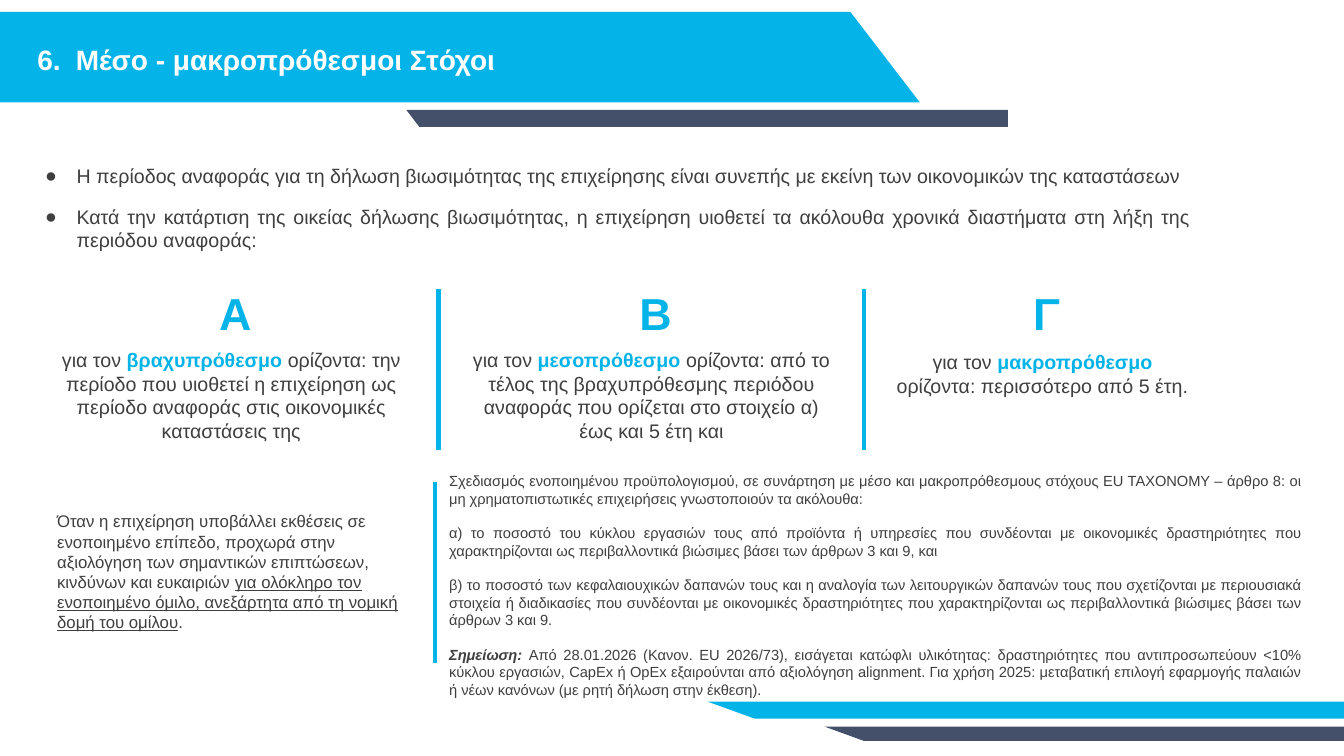
from lxml import etree
from pptx import Presentation
from pptx.dml.color import RGBColor
from pptx.enum.shapes import MSO_CONNECTOR
from pptx.enum.text import MSO_ANCHOR, PP_ALIGN
from pptx.oxml.ns import qn
from pptx.util import Cm, Pt

LEFT, MID, JUST = PP_ALIGN.LEFT, PP_ALIGN.CENTER, PP_ALIGN.JUSTIFY
TOP, CENTER = MSO_ANCHOR.TOP, MSO_ANCHOR.MIDDLE
STRAIGHT = MSO_CONNECTOR.STRAIGHT
WIDTH, HEIGHT = 33.87, 19.05
BLUE, NAVY, GREY, WHITE = "04B3E7", "444F69", "3F3F3F", "FFFFFF"


def paint(target, color):
    target.solid()
    target.fore_color.rgb = RGBColor.from_string(color)


def mark(para, bullet, color):
    props = para._p.get_or_add_pPr()
    tint = etree.SubElement(props, qn("a:buClr"))
    etree.SubElement(tint, qn("a:srgbClr"), val=color)
    if isinstance(bullet, int):
        etree.SubElement(props, qn("a:buFont"), typeface="+mj-lt")
        etree.SubElement(props, qn("a:buAutoNum"), type="arabicPeriod",
                         startAt=str(bullet))
    else:
        etree.SubElement(props, qn("a:buFont"), typeface="Arial")
        etree.SubElement(props, qn("a:buChar"), char=bullet)


def write(slide, box, paras, size=14, color=GREY, bold=False, align=LEFT,
          anchor=TOP, pad=(0.25, 0.13), margin=0, hang=0, bullet=None, gap=6):
    frame = slide.shapes.add_textbox(*map(Cm, box)).text_frame
    frame.word_wrap = True
    frame.vertical_anchor = anchor
    frame.margin_left = frame.margin_right = Cm(pad[0])
    frame.margin_top = frame.margin_bottom = Cm(pad[1])
    for index, runs in enumerate(paras):
        para = frame.add_paragraph() if index else frame.paragraphs[0]
        para.alignment = align
        para.space_before = Pt(gap if index else 0)
        para.space_after = Pt(gap)
        props = para._p.get_or_add_pPr()
        props.set("marL", str(Cm(margin)))
        props.set("indent", str(Cm(-hang)))
        if bullet:
            mark(para, bullet, color)
        for text, style in runs:
            run = para.add_run()
            run.text = text
            font = run.font
            font.name, font.size = "Arial", Pt(size)
            font.bold = style.get("bold", bold)
            font.italic = style.get("italic", False)
            font.underline = style.get("under", False)
            paint(font.fill, style.get("color", color))


def band(slide, box, color, left_cut=0, right_cut=0):
    left, top, width, height = box
    right, low = left + width, top + height
    form = slide.shapes.build_freeform(Cm(left), Cm(top))
    points = [(right - right_cut, top), (right, low), (left + left_cut, low)]
    form.add_line_segments([(Cm(x), Cm(y)) for x, y in points])
    shape = form.convert_to_shape()
    shape.shadow.inherit = False
    paint(shape.fill, color)
    shape.line.fill.background()


def rule(slide, x, top, height):
    line = slide.shapes.add_connector(STRAIGHT, Cm(x), Cm(top), Cm(x), Cm(top + height))
    paint(line.line.fill, BLUE)
    line.line.width = Pt(3)
    etree.SubElement(line._element.spPr, qn("a:effectLst"))


def header(slide, box):
    left, top, width, height = box
    band(slide, box, BLUE, right_cut=1.75)
    band(slide, (left + 10.24, top + 2.47, 15.16, 0.43), NAVY, left_cut=0.33)
    write(slide, (left + 0.69, top + 0.28, 20.8, 1.83),
          [[("Μέσο - μακροπρόθεσμοι Στόχοι", {})]], size=20, color=WHITE,
          bold=True, anchor=CENTER, margin=0.97, hang=0.97, bullet=6, gap=0)


def footer(slide, top):
    band(slide, (17.83, top, WIDTH - 17.83, 0.43), BLUE, left_cut=1.19)
    band(slide, (20.78, top + 0.63, WIDTH - 20.78, 0.36), NAVY, left_cut=0.99)


def intro(slide, box):
    lines = [
        "Η περίοδος αναφοράς για τη δήλωση βιωσιμότητας της επιχείρησης είναι συνεπής με εκείνη των οικονομικών της καταστάσεων",
        "Κατά την κατάρτιση της οικείας δήλωσης βιωσιμότητας, η επιχείρηση υιοθετεί τα ακόλουθα χρονικά διαστήματα στη λήξη της περιόδου αναφοράς:",
    ]
    write(slide, box, [[(line, {})] for line in lines], align=JUST,
          pad=(0.25, 0.25), margin=0.99, hang=0.79, bullet="●")


def column(slide, box, letter, term, rest, drop):
    left, top, width, height = box
    write(slide, (left + width / 2 - 0.71, top, 1.42, 2.31), [[(letter, {})]],
          size=32, color=BLUE, bold=True, align=MID, pad=(0.25, 0.38), margin=0.2)
    runs = [("για τον ", {}), (term, {"color": BLUE, "bold": True}), (rest, {})]
    write(slide, (left, top + drop, width, height - drop), [runs], align=MID)


def group(slide, box):
    runs = [
        ("Όταν η επιχείρηση υποβάλλει εκθέσεις σε ενοποιημένο επίπεδο, προχωρά στην αξιολόγηση των σημαντικών επιπτώσεων, κινδύνων και ευκαιριών ", {}),
        ("για ολόκληρο τον ενοποιημένο όμιλο, ανεξάρτητα από τη νομική δομή του ομίλου", {"under": True}),
        (".", {}),
    ]
    write(slide, box, [runs], size=12, margin=0.2)


def budget(slide, box):
    paras = [
        [("Σχεδιασμός ενοποιημένου προϋπολογισμού, σε συνάρτηση με μέσο και μακροπρόθεσμους στόχους EU TAXONOMY – άρθρο 8: οι μη χρηματοπιστωτικές επιχειρήσεις γνωστοποιούν τα ακόλουθα:", {})],
        [("α) το ποσοστό του κύκλου εργασιών τους από προϊόντα ή υπηρεσίες που συνδέονται με οικονομικές δραστηριότητες που χαρακτηρίζονται ως περιβαλλοντικά βιώσιμες βάσει των άρθρων 3 και 9, και", {})],
        [("β) το ποσοστό των κεφαλαιουχικών δαπανών τους και η αναλογία των λειτουργικών δαπανών τους που σχετίζονται με περιουσιακά στοιχεία ή διαδικασίες που συνδέονται με οικονομικές δραστηριότητες που χαρακτηρίζονται ως περιβαλλοντικά βιώσιμες βάσει των άρθρων 3 και 9.", {})],
        [("Σημείωση: ", {"bold": True, "italic": True}),
         ("Από 28.01.2026 (Κανον. EU 2026/73), εισάγεται κατώφλι υλικότητας: δραστηριότητες που αντιπροσωπεύουν <10% κύκλου εργασιών, CapEx ή OpEx εξαιρούνται από αξιολόγηση alignment. Για χρήση 2025: μεταβατική επιλογή εφαρμογής παλαιών ή νέων κανόνων (με ρητή δήλωση στην έκθεση).", {})],
    ]
    left, top, width, height = box
    write(slide, box, paras, size=10.5, align=JUST, margin=0.2)
    rule(slide, left + 0.1, top + 0.38, 4.57)


def main():
    deck = Presentation()
    deck.slide_width, deck.slide_height = Cm(WIDTH), Cm(HEIGHT)
    slide = deck.slides.add_slide(deck.slide_layouts[6])
    header(slide, (0, 0.3, 23.18, 2.28))
    footer(slide, 17.68)
    intro(slide, (0.69, 3.89, 29.57, 3.18))
    terms = [
        (0.99, 9.68, 4.45, "A", "βραχυπρόθεσμο", " ορίζοντα: την περίοδο που υιοθετεί η επιχείρηση ως περίοδο αναφοράς στις οικονομικές καταστάσεις της", 1.81),
        (11.58, 9.68, 4.45, "B", "μεσοπρόθεσμο", " ορίζοντα: από το τέλος της βραχυπρόθεσμης περιόδου αναφοράς που ορίζεται στο στοιχείο α) έως και 5 έτη και", 1.81),
        (22.3, 7.95, 3.31, "Γ", "μακροπρόθεσμο", " ορίζοντα: περισσότερο από 5 έτη.", 1.86),
    ]
    for left, width, height, *words in terms:
        column(slide, (left, 6.83, width, height), *words)
    for left, *_ in terms[1:]:
        rule(slide, left - 0.53, 7.29, 4.04)
    group(slide, (0.99, 12.75, 9.68, 3.33))
    budget(slide, (10.87, 11.76, 22.2, 6.02))
    deck.save("out.pptx")


if __name__ == "__main__":
    main()
